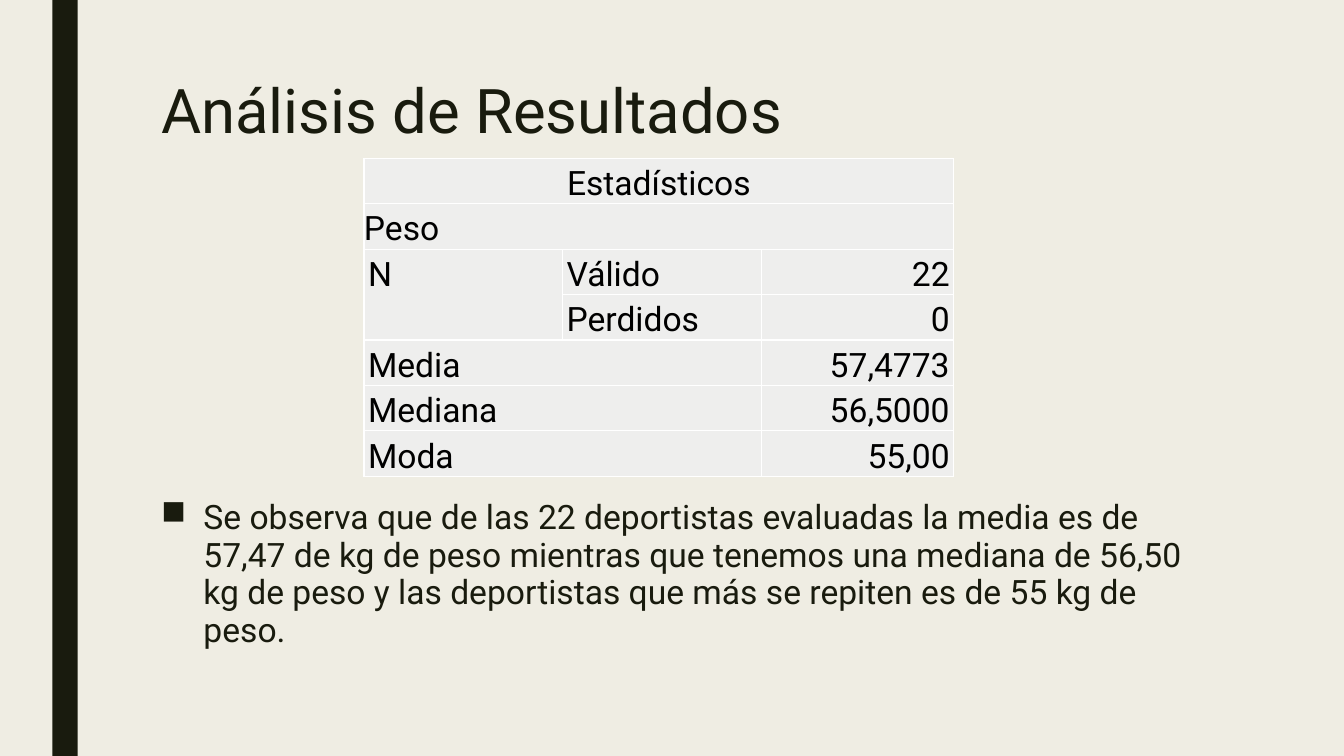
"""Build the slide with the weight statistics table and its reading."""
from lxml import etree
from pptx import Presentation
from pptx.dml.color import RGBColor
from pptx.enum import shapes, text
from pptx.oxml import ns
from pptx.util import Inches, Pt

FONT = "Roboto"
INK, PAPER, CELL, WHITE, BLACK = "191B0E", "EFEDE3", "EEEEED", "FFFFFF", "000000"
TITLE = "Análisis de Resultados"
NOTE = ("Se observa que de las 22 deportistas evaluadas la media es de 57,47 de kg "
        "de peso mientras que tenemos una mediana de 56,50 kg de peso y las "
        "deportistas que más se repiten es de 55 kg de peso.")
ROWS = [
    ("Estadísticos", "", ""),
    ("Peso", "", ""),
    ("N", "Válido", "22"),
    ("", "Perdidos", "0"),
    ("Media", "", "57,4773"),
    ("Mediana", "", "56,5000"),
    ("Moda", "", "55,00"),
]
SPANS = [(0, 0, 0, 2), (1, 0, 1, 2), (2, 0, 3, 0),
         (4, 0, 4, 1), (5, 0, 5, 1), (6, 0, 6, 1)]
WIDTHS = [1.97, 1.97, 1.91]
ROW_H = 0.43
PAD = Inches(0.04)


def rgb(code):
    """Turn a hex string into a colour."""
    return RGBColor.from_string(code)


def paint(fill, code):
    """Make a fill solid."""
    fill.solid()
    fill.fore_color.rgb = rgb(code)


def style(para, size, code, space):
    """Set font and line spacing of a paragraph."""
    para.font.name, para.font.size = FONT, Pt(size)
    para.font.color.rgb = rgb(code)
    para.line_spacing = space


def edge(cell):
    """Give a cell thin white borders and its fill."""
    props = cell._tc.get_or_add_tcPr()
    for side in ("lnL", "lnR", "lnT", "lnB"):
        line = etree.SubElement(props, ns.qn("a:" + side), w=str(Pt(1)))
        fill = etree.SubElement(line, ns.qn("a:solidFill"))
        etree.SubElement(fill, ns.qn("a:srgbClr"), val=WHITE)
    paint(cell.fill, CELL)


def add_stats(slide):
    """Add the table of statistics."""
    grid = slide.shapes.add_table(
        len(ROWS), len(WIDTHS), Inches(3.61), Inches(1.57),
        Inches(sum(WIDTHS)), Inches(ROW_H * len(ROWS))).table
    grid.first_row = grid.horz_banding = False
    for col, width in zip(grid.columns, WIDTHS):
        col.width = Inches(width)
    for r, row in enumerate(ROWS):
        grid.rows[r].height = Inches(ROW_H)
        for c, word in enumerate(row):
            cell = grid.cell(r, c)
            cell.margin_left = cell.margin_right = 0
            cell.margin_top = cell.margin_bottom = 0
            cell.text = word
            para = cell.text_frame.paragraphs[0]
            style(para, 24, BLACK, 1.15)
            if r != 1:
                props = para._p.get_or_add_pPr()
                props.set("marL", str(PAD))
                props.set("marR", str(PAD))
            if c == 2:
                para.alignment = text.PP_ALIGN.RIGHT
            edge(cell)
    for top, left, low, right in SPANS:
        grid.cell(top, left).merge(grid.cell(low, right))
    head = grid.cell(0, 0)
    head.vertical_anchor = text.MSO_ANCHOR.MIDDLE
    head.text_frame.paragraphs[0].alignment = text.PP_ALIGN.CENTER
    grid.cell(1, 0).vertical_anchor = text.MSO_ANCHOR.BOTTOM


def add_note(slide):
    """Add the bulleted reading of the table."""
    box = slide.shapes.add_textbox(Inches(1.5), Inches(4.9), Inches(10.5), Inches(1.52))
    frame = box.text_frame
    frame.word_wrap = True
    frame.text = NOTE
    para = frame.paragraphs[0]
    style(para, 24, INK, 0.94)
    para.space_after = Pt(2)
    props = para._p.get_or_add_pPr()
    props.set("marL", str(Inches(0.42)))
    props.set("indent", str(-Inches(0.42)))
    mark = etree.Element(ns.qn("a:buChar"), char="■")
    props.find(ns.qn("a:defRPr")).addprevious(mark)


def main():
    """Build and save the deck."""
    deck = Presentation()
    deck.slide_width, deck.slide_height = Inches(13.33), Inches(7.5)
    slide = deck.slides.add_slide(deck.slide_layouts[5])
    paint(slide.background.fill, PAPER)

    bar = slide.shapes.add_shape(shapes.MSO_SHAPE.RECTANGLE, Inches(0.52), 0,
                                 Inches(0.25), deck.slide_height)
    bar.shadow.inherit = False
    paint(bar.fill, INK)
    bar.line.fill.background()

    title = slide.shapes.title
    title.left, title.top = Inches(1.5), Inches(0.75)
    title.width, title.height = Inches(10.5), Inches(1.62)
    title.text = TITLE
    title.text_frame.vertical_anchor = text.MSO_ANCHOR.TOP
    para = title.text_frame.paragraphs[0]
    style(para, 44, INK, 0.89)
    para.alignment = text.PP_ALIGN.LEFT

    add_stats(slide)
    add_note(slide)
    deck.save("out.pptx")


if __name__ == "__main__":
    main()
